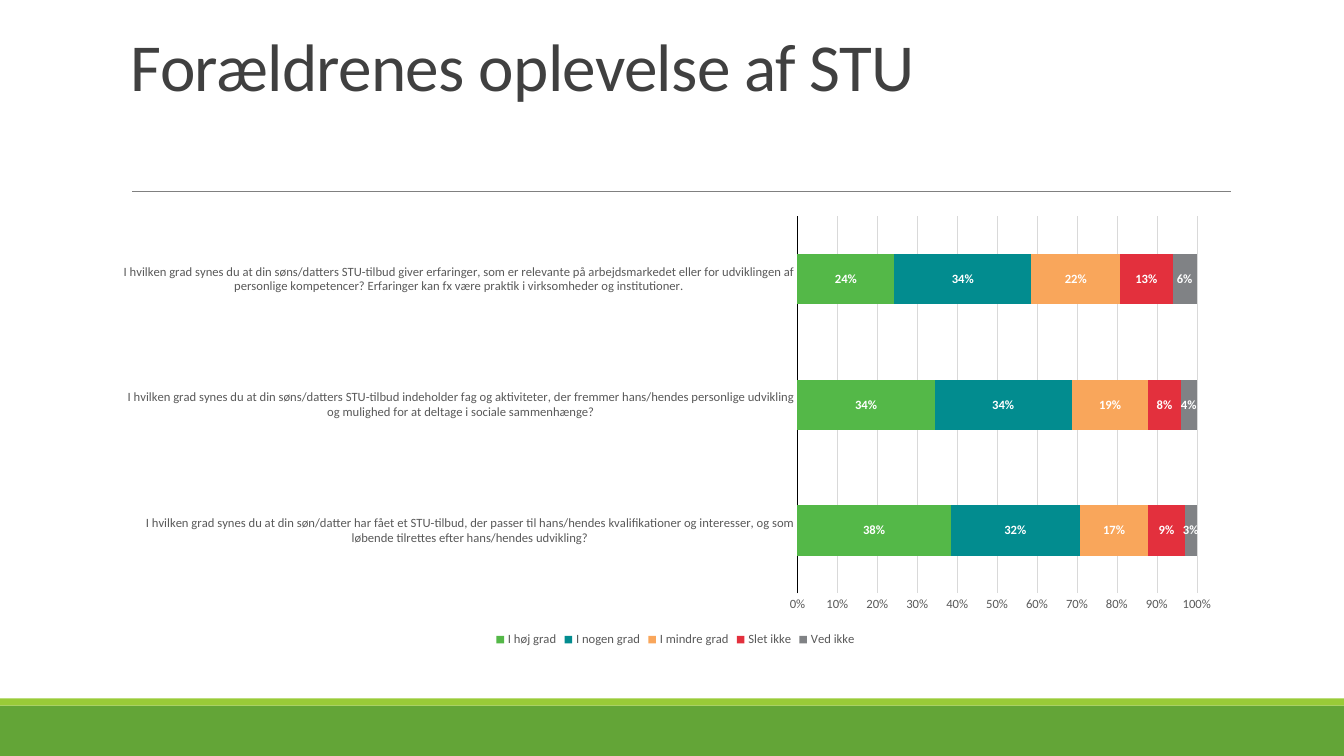
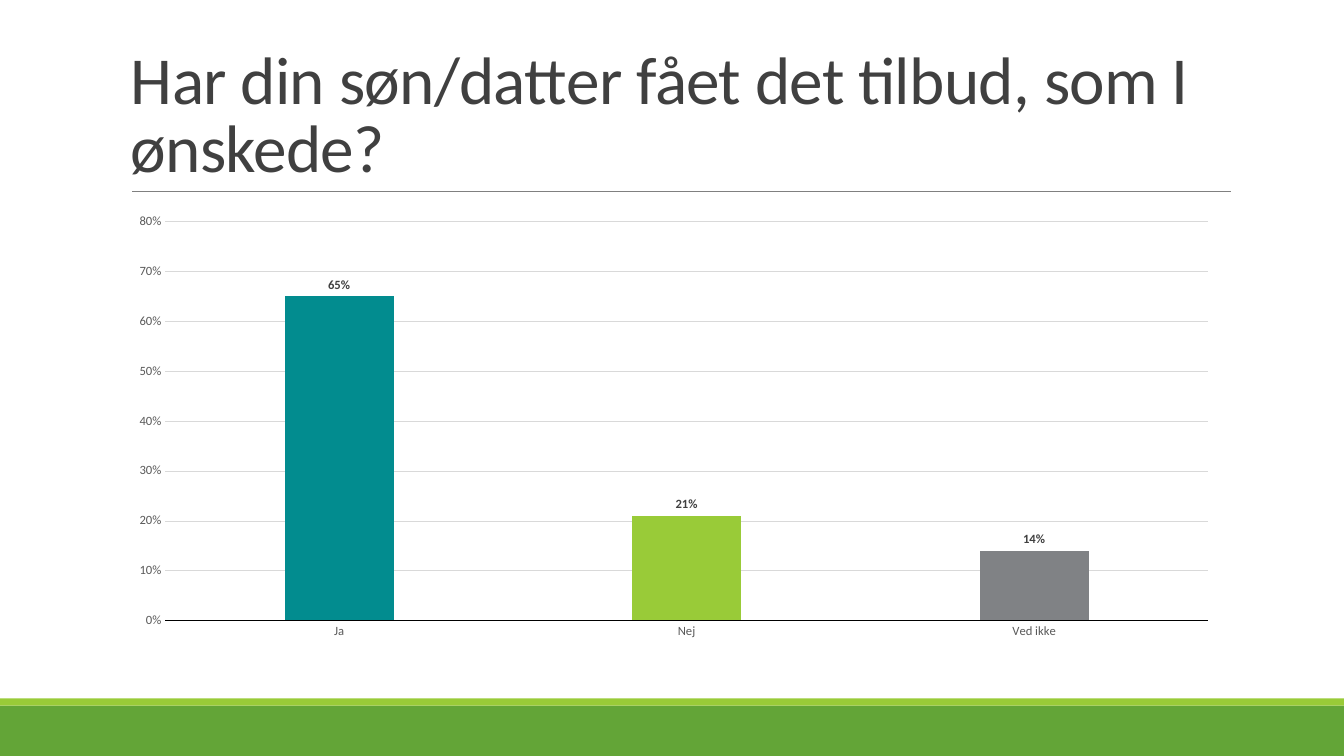
from dataclasses import dataclass, field

from lxml import etree
from pptx import Presentation
from pptx.chart.data import CategoryChartData
from pptx.dml.color import RGBColor
from pptx.enum.chart import XL_CHART_TYPE as ChartType
from pptx.enum.chart import XL_LABEL_POSITION as LabelPos
from pptx.enum.chart import XL_LEGEND_POSITION as LegendPos
from pptx.enum.chart import XL_TICK_MARK as Tick
from pptx.enum.shapes import MSO_CONNECTOR, MSO_SHAPE
from pptx.enum.text import MSO_ANCHOR
from pptx.oxml import parse_xml
from pptx.oxml.ns import nsdecls, qn
from pptx.util import Emu, Pt

EMU_PER_PX = 9144  # 100 px to the inch
WIDTH, HEIGHT = 1333, 750
FONT = "Calibri"
HAIRLINE = Pt(0.1)

BAND_GREEN = RGBColor(0x63, 0xA5, 0x37)
LIME = RGBColor(0x99, 0xCB, 0x38)
RULE_GREY = RGBColor(0x80, 0x80, 0x80)
DARK = RGBColor(0x40, 0x40, 0x40)
AXIS_TEXT = RGBColor(0x59, 0x59, 0x59)
GRID = RGBColor(0xD9, 0xD9, 0xD9)
BLACK = RGBColor(0, 0, 0)
WHITE = RGBColor(0xFF, 0xFF, 0xFF)
GREEN = RGBColor(0x54, 0xB8, 0x48)
TEAL = RGBColor(0x02, 0x8C, 0x8F)
ORANGE = RGBColor(0xF9, 0xA6, 0x5B)
RED = RGBColor(0xE3, 0x30, 0x3D)
GREY = RGBColor(0x80, 0x82, 0x85)


@dataclass
class Band:
    top: int
    height: int
    color: RGBColor


@dataclass
class Series:
    name: str
    values: tuple[float, ...]
    color: RGBColor
    points: dict[int, RGBColor] = field(default_factory=dict)


@dataclass
class ChartSpec:
    kind: ChartType
    top: int
    plot_area: tuple[float, float, float, float]  # x, y, w, h as shares of the chart
    categories: list[str]
    series: list[Series]
    gap: int
    overlap: int
    label_pos: LabelPos
    label_color: RGBColor
    legend: bool = False
    maximum: float | None = None


@dataclass
class SlideSpec:
    title: str
    anchor: MSO_ANCHOR
    chart: ChartSpec


BANDS = [Band(700, 50, BAND_GREEN), Band(693, 7, LIME)]

SLIDES = [
    SlideSpec(
        "Forældrenes oplevelse af STU",
        MSO_ANCHOR.TOP,
        ChartSpec(
            ChartType.BAR_STACKED_100, 206, (0.61, 0.02, 0.36, 0.85),
            [
                "I hvilken grad synes du at din søn/datter har fået et STU-tilbud, "
                "der passer til hans/hendes kvalifikationer og interesser, og som "
                "løbende tilrettes efter hans/hendes udvikling?",
                "I hvilken grad synes du at din søns/datters STU-tilbud indeholder "
                "fag og aktiviteter, der fremmer hans/hendes personlige udvikling "
                "og mulighed for at deltage i sociale sammenhænge?",
                "I hvilken grad synes du at din søns/datters STU-tilbud giver "
                "erfaringer, som er relevante på arbejdsmarkedet eller for "
                "udviklingen af personlige kompetencer? Erfaringer kan fx være "
                "praktik i virksomheder og institutioner.",
            ],
            [
                Series("I høj grad", (0.38, 0.34, 0.24), GREEN),
                Series("I nogen grad", (0.32, 0.34, 0.34), TEAL),
                Series("I mindre grad", (0.17, 0.19, 0.22), ORANGE),
                Series("Slet ikke", (0.09, 0.08, 0.13), RED),
                Series("Ved ikke", (0.03, 0.04, 0.06), GREY),
            ],
            150, 100, LabelPos.CENTER, WHITE, legend=True,
        ),
    ),
    SlideSpec(
        "Har din søn/datter fået det tilbud, som I ønskede?",
        MSO_ANCHOR.BOTTOM,
        ChartSpec(
            ChartType.COLUMN_CLUSTERED, 202, (0.04, 0.04, 0.94, 0.9),
            ["Ja", "Nej", "Ved ikke"],
            [Series("Series 1", (0.65, 0.21, 0.14), LIME, {0: TEAL, 2: GREY})],
            219, -27, LabelPos.OUTSIDE_END, DARK, maximum=0.8,
        ),
    ),
]


def px(n: int) -> Emu:
    return Emu(n * EMU_PER_PX)


def set_font(font, size: float, color: RGBColor, bold: bool = False) -> None:
    font.name = FONT
    font.size = Pt(size)
    font.bold = bold
    font.color.rgb = color


def set_fill(fill, color: RGBColor) -> None:
    fill.solid()
    fill.fore_color.rgb = color


def set_line(line, color: RGBColor, width: int) -> None:
    line.color.rgb = color
    line.width = width


def add_frame(slide) -> None:
    """Draw the footer bands and the rule under the title."""
    for band in BANDS:
        sp = slide.shapes.add_shape(
            MSO_SHAPE.RECTANGLE, 0, px(band.top), px(WIDTH), px(band.height))
        sp.shadow.inherit = False
        set_fill(sp.fill, band.color)
        sp.line.fill.background()
    rule = slide.shapes.add_connector(
        MSO_CONNECTOR.STRAIGHT, px(131), px(190), px(1221), px(190))
    set_line(rule.line, RULE_GREY, Pt(0.5))
    etree.SubElement(rule.element.spPr, qn("a:effectLst"))


def add_title(slide, text: str, anchor: MSO_ANCHOR) -> None:
    tf = slide.shapes.add_textbox(px(120), px(31), px(1100), px(159)).text_frame
    tf.word_wrap = True
    tf.vertical_anchor = anchor
    tf.text = text
    p = tf.paragraphs[0]
    p.line_spacing = 0.85
    font = p.runs[0].font
    set_font(font, 48, DARK)
    p.runs[0]._r.get_or_add_rPr().set("spc", "-50")


def place_plot_area(chart, box: tuple[float, float, float, float]) -> None:
    """Fix the inner plot area, leaving the axis labels outside it."""
    modes = '<c:xMode val="edge"/><c:yMode val="edge"/>'
    sizes = "".join(f'<c:{tag} val="{v}"/>' for tag, v in zip("xywh", box))
    layout = parse_xml(
        f'<c:layout {nsdecls("c")}><c:manualLayout>'
        f'<c:layoutTarget val="inner"/>{modes}{sizes}'
        "</c:manualLayout></c:layout>")
    plot_area = chart._chartSpace.chart.plotArea
    for old in plot_area.findall(qn("c:layout")):
        plot_area.remove(old)
    plot_area.insert(0, layout)


def style_axes(chart, maximum: float | None) -> None:
    cat, val = chart.category_axis, chart.value_axis
    for axis in (cat, val):
        axis.major_tick_mark = axis.minor_tick_mark = Tick.NONE
        set_font(axis.tick_labels.font, 9, AXIS_TEXT)
    cat.has_major_gridlines = False
    set_line(cat.format.line, BLACK, HAIRLINE)
    val.format.line.fill.background()
    val.has_major_gridlines = True
    set_line(val.major_gridlines.format.line, GRID, HAIRLINE)
    val.tick_labels.number_format = "0%"
    val.tick_labels.number_format_is_linked = False
    val.minimum_scale = 0
    if maximum is not None:
        val.maximum_scale = maximum


def style_series(series, spec: Series, chart_spec: ChartSpec) -> None:
    set_fill(series.format.fill, spec.color)
    series.invert_if_negative = False
    for i, color in spec.points.items():
        set_fill(series.points[i].format.fill, color)
    labels = series.data_labels
    labels.show_value = True
    labels.number_format = "0%"
    labels.number_format_is_linked = False
    labels.position = chart_spec.label_pos
    set_font(labels.font, 9, chart_spec.label_color, bold=True)


def add_chart(slide, spec: ChartSpec) -> None:
    data = CategoryChartData(number_format="0%")
    data.categories = spec.categories
    for s in spec.series:
        data.add_series(s.name, s.values)
    chart = slide.shapes.add_chart(
        spec.kind, px(120), px(spec.top), px(1100), px(440), data).chart
    set_font(chart.font, 10, BLACK)
    chart.has_title = False
    chart.has_legend = spec.legend
    if spec.legend:
        chart.legend.position = LegendPos.BOTTOM
        chart.legend.include_in_layout = False
        set_font(chart.legend.font, 9, AXIS_TEXT)
    plot = chart.plots[0]
    plot.vary_by_categories = False
    plot.gap_width = spec.gap
    plot.overlap = spec.overlap
    place_plot_area(chart, spec.plot_area)
    style_axes(chart, spec.maximum)
    for series, series_spec in zip(plot.series, spec.series):
        style_series(series, series_spec, spec)


def main() -> None:
    prs = Presentation()
    prs.slide_width, prs.slide_height = px(WIDTH), px(HEIGHT)
    for spec in SLIDES:
        slide = prs.slides.add_slide(prs.slide_layouts[6])
        add_frame(slide)
        add_title(slide, spec.title, spec.anchor)
        add_chart(slide, spec.chart)
    prs.save("out.pptx")


if __name__ == "__main__":
    main()
